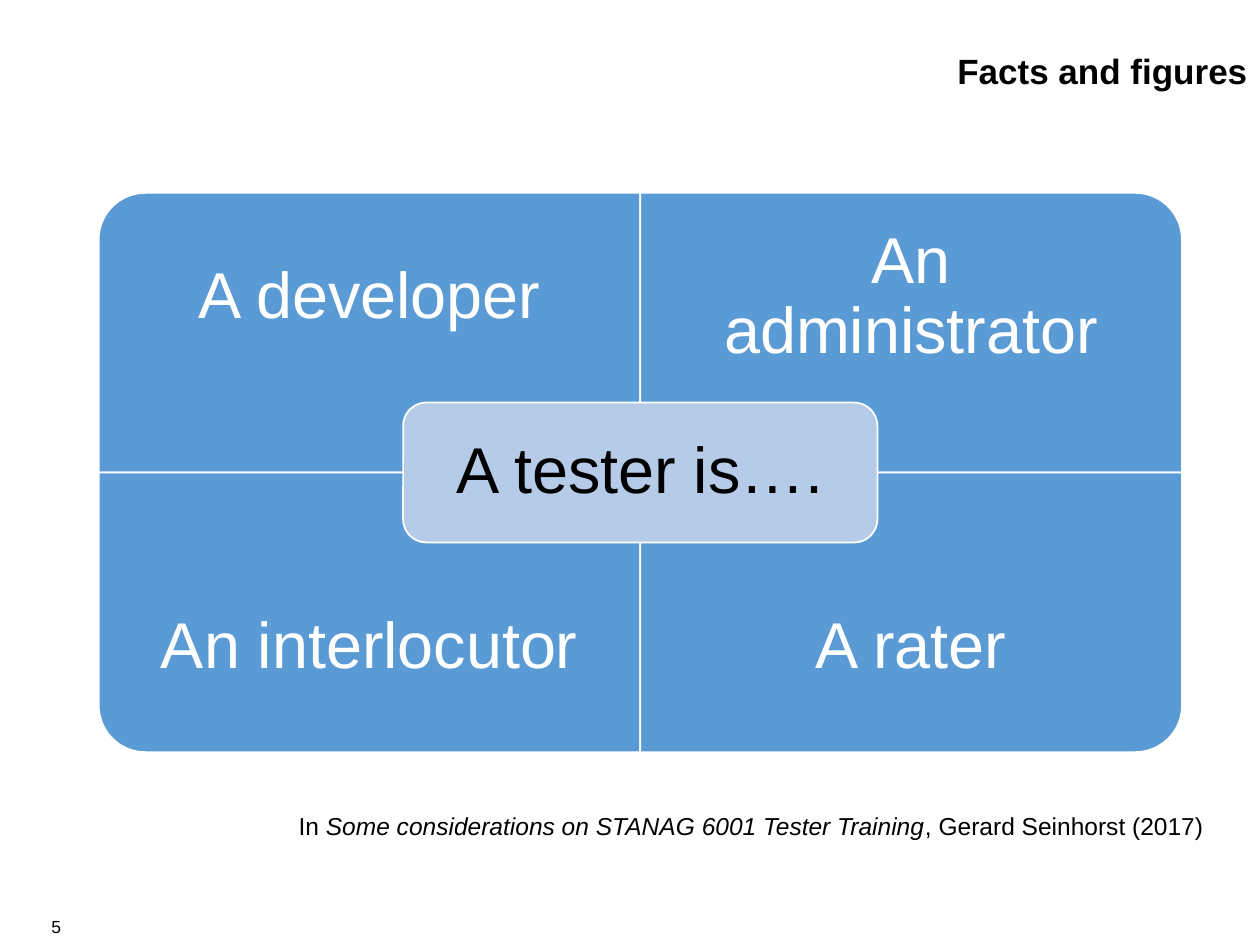
from pptx import Presentation
from pptx.dml.color import RGBColor
from pptx.enum import shapes, text
from pptx.util import Pt

BLACK = RGBColor(0, 0, 0)
WHITE = RGBColor(255, 255, 255)
BLUE = RGBColor(0x5B, 0x9B, 0xD5)
PALE_BLUE = RGBColor(0xB5, 0xCB, 0xE7)

QUADRANTS = [
    ("A developer", 0, 0, 270),
    ("An administrator", 0, 1, 0),
    ("An interlocutor", 1, 0, 180),
    ("A rater", 1, 1, 90),
]


def write_text(frame, *parts, size, color=BLACK, bold=False, align=text.PP_ALIGN.LEFT,
               anchor=text.MSO_ANCHOR.TOP, spacing=None, inset=None):
    """Fill a frame with one paragraph of (words, italic) parts."""
    frame.word_wrap = True
    frame.vertical_anchor = anchor
    if inset is not None:
        frame.margin_left = frame.margin_right = Pt(inset)
        frame.margin_top = frame.margin_bottom = Pt(inset)
    paragraph = frame.paragraphs[0]
    paragraph.alignment = align
    if spacing:
        paragraph.line_spacing = spacing
    for words, italic in parts:
        run = paragraph.add_run()
        run.text = words
        run.font.name = "Arial"
        run.font.size = Pt(size)
        run.font.bold = bold
        run.font.italic = italic
        run.font.color.rgb = color


def add_text(slide, box, *parts, **style):
    """Add a text box in the given box."""
    label = slide.shapes.add_textbox(*map(Pt, box))
    write_text(label.text_frame, *parts, **style)


def add_panel(slide, kind, box, fill, rotation=0):
    """Add a filled panel that covers the box after a quarter-turn rotation."""
    left, top, width, height = box
    if rotation % 180:
        shift = (width - height) / 2
        left, top, width, height = left + shift, top - shift, height, width
    panel = slide.shapes.add_shape(kind, Pt(left), Pt(top), Pt(width), Pt(height))
    panel.rotation = rotation
    panel.shadow.inherit = False
    panel.fill.solid()
    panel.fill.fore_color.rgb = fill
    panel.line.color.rgb = WHITE
    panel.line.width = Pt(1)
    return panel


def add_matrix(slide, box):
    """Draw the four tester roles around the central statement."""
    left, top, width, height = box
    cell_width, cell_height = width / 2, height / 2
    style = dict(size=37, align=text.PP_ALIGN.CENTER,
                 anchor=text.MSO_ANCHOR.MIDDLE, spacing=0.9)
    for role, row, column, rotation in QUADRANTS:
        x, y = left + column * cell_width, top + row * cell_height
        add_panel(slide, shapes.MSO_SHAPE.ROUND_1_RECTANGLE,
                  (x, y, cell_width, cell_height), BLUE, rotation)
        add_text(slide, (x, y + row * cell_height / 4, cell_width, cell_height * 0.75),
                 (role, False), color=WHITE, inset=21, **style)

    hub_width, hub_height = 271, cell_height / 2
    hub_box = (left + (width - hub_width) / 2, top + (height - hub_height) / 2,
               hub_width, hub_height)
    hub = add_panel(slide, shapes.MSO_SHAPE.ROUNDED_RECTANGLE, hub_box, PALE_BLUE)
    write_text(hub.text_frame, ("A tester is….", False), inset=11, **style)


def add_citation(slide, box):
    """Write the source below the matrix."""
    add_text(slide, box, ("In ", False),
             ("Some considerations on STANAG 6001 Tester Training", True),
             (", Gerard Seinhorst (2017)", False),
             size=14, align=text.PP_ALIGN.RIGHT, spacing=1.5)


def main():
    """Build and save the slide."""
    deck = Presentation()
    deck.slide_width, deck.slide_height = Pt(720), Pt(540)
    slide = deck.slides.add_slide(deck.slide_layouts[6])
    add_text(slide, (22.3, 519.8, 36.7, 19.4), ("5", False), size=10)
    add_matrix(slide, (56.4, 110.2, 619, 319.6))
    add_citation(slide, (136.8, 451.4, 558, 30.2))
    add_text(slide, (56.2, 24.5, 663.8, 31.7), ("Facts and figures", False),
             size=20, bold=True, align=text.PP_ALIGN.RIGHT)
    deck.save("out.pptx")


if __name__ == "__main__":
    main()
